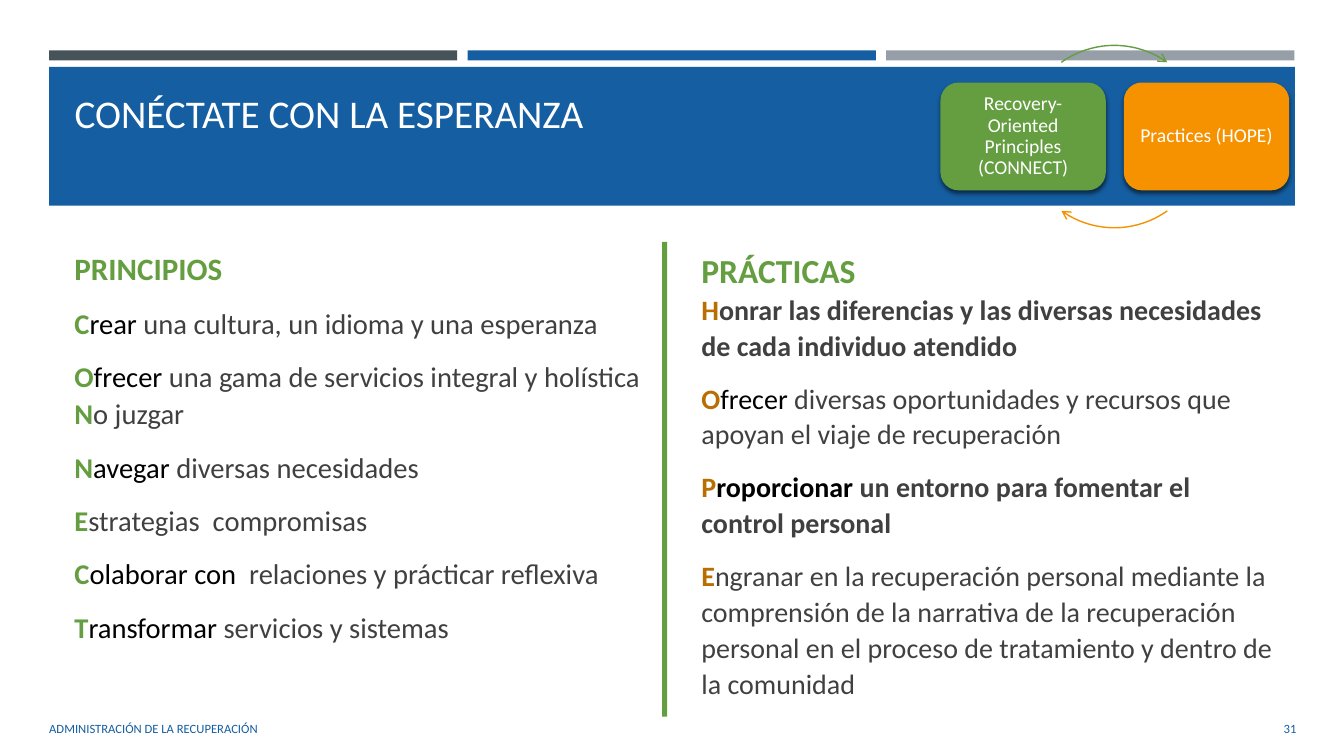
"""Builds the slide on connecting with hope: principles beside practices."""
from lxml import etree
from pptx import Presentation
from pptx.dml.color import RGBColor
from pptx.enum import shapes, text
from pptx.oxml import ns
from pptx.util import Pt

BLUE = RGBColor(0x15, 0x5E, 0xA1)
SLATE = RGBColor(0x46, 0x53, 0x59)
SILVER = RGBColor(0x96, 0x9F, 0xA7)
GREEN = RGBColor(0x64, 0x9E, 0x40)
ORANGE = RGBColor(0xF6, 0x92, 0x00)
BROWN = RGBColor(0xB8, 0x6E, 0x00)
BLACK = RGBColor(0, 0, 0)
GRAY = RGBColor(0x40, 0x40, 0x40)
WHITE = RGBColor(0xFF, 0xFF, 0xFF)
FONT = "Calibri"
BREAK = "\n"

TITLE = "CONÉCTATE CON LA ESPERANZA"
FOOTER = "ADMINISTRACIÓN DE LA RECUPERACIÓN"
PAGE = "31"
STRIPES = [SLATE, BLUE, SILVER]
CARDS = [
    ("Recovery-Oriented Principles (CONNECT)", GREEN, 234.5),
    ("Practices (HOPE)", ORANGE, 54.5),
]
STYLES = {
    "principle": (GREEN, True),
    "practice": (BROWN, True),
    "verb": (BLACK, False),
    "strong verb": (BLACK, True),
    "plain": (GRAY, False),
    "strong": (GRAY, True),
}
PRINCIPLES = [
    [("PRINCIPIOS", "principle", 22.2)],
    [("C", "principle"), ("rear", "verb"), (" una cultura, un idioma y una esperanza", "plain")],
    [("O", "principle"), ("frecer ", "verb"),
     ("una gama de servicios integral y holística", "plain"), (BREAK, "plain"),
     ("N", "principle"), ("o juzgar", "plain")],
    [("N", "principle"), ("avegar ", "verb"), ("diversas necesidades", "plain")],
    [("E", "principle"), ("strategias  compromisas", "plain")],
    [("C", "principle"), ("olaborar con  ", "verb"), ("relaciones y prácticar reflexiva", "plain")],
    [("T", "principle"), ("ransformar ", "verb"), ("servicios y sistemas", "plain")],
]
PRACTICES = [
    [("PRÁCTICAS", "principle", 24), (BREAK, "plain"), ("H", "practice"),
     ("onrar las diferencias y las diversas necesidades de cada individuo atendido", "strong")],
    [("O", "practice"), ("frecer ", "verb"),
     ("diversas oportunidades y recursos que apoyan el viaje de recuperación", "plain")],
    [("P", "practice"), ("roporcionar ", "strong verb"),
     ("un entorno para fomentar el control personal", "strong")],
    [("E", "practice"),
     ("ngranar en la recuperación personal mediante la comprensión de la narrativa de la "
      "recuperación personal en el proceso de tratamiento y dentro de la comunidad", "plain")],
]
COLUMNS = [(46.1, 333.4, PRINCIPLES, 20.4), (493.9, 319, PRACTICES, 20)]
FOOTERS = [(28.1, 537, FOOTER, text.PP_ALIGN.LEFT), (850.3, 82.8, PAGE, text.PP_ALIGN.RIGHT)]


def add_run(paragraph, words, size, color, bold=False):
    run = paragraph.add_run()
    run.text = words
    run.font.name = FONT
    run.font.size = Pt(size)
    run.font.bold = bold
    run.font.color.rgb = color


def add_figure(slide, kind, left, top, width, height, fill=None):
    figure = slide.shapes.add_shape(kind, Pt(left), Pt(top), Pt(width), Pt(height))
    figure.shadow.inherit = False
    if fill is None:
        figure.fill.background()
    else:
        figure.fill.solid()
        figure.fill.fore_color.rgb = fill
        figure.line.fill.background()
    return figure


def add_box(slide, left, top, width, height):
    frame = slide.shapes.add_textbox(Pt(left), Pt(top), Pt(width), Pt(height)).text_frame
    frame.word_wrap = True
    return frame


def add_header(slide):
    for i, color in enumerate(STRIPES):
        add_figure(slide, shapes.MSO_SHAPE.RECTANGLE, 35 + 299 * i, 36, 291.6, 7.2, color)
    band = add_figure(slide, shapes.MSO_SHAPE.RECTANGLE, 35, 47.8, 890, 99.2, BLUE)
    title = slide.shapes.title
    title.left, title.top, title.width, title.height = Pt(46.1), Pt(57.6), Pt(868.3), Pt(77.8)
    band.element.addnext(title.element)
    frame = title.text_frame
    frame.auto_size = text.MSO_AUTO_SIZE.NONE
    frame.vertical_anchor = text.MSO_ANCHOR.TOP
    frame.margin_top = Pt(6.5)
    frame.paragraphs[0].alignment = text.PP_ALIGN.LEFT
    add_run(frame.paragraphs[0], TITLE, 28, WHITE)


def add_column(slide, left, height, items, size):
    frame = add_box(slide, left, 172.8, 427, height)
    for i, item in enumerate(items):
        paragraph = frame.add_paragraph() if i else frame.paragraphs[0]
        paragraph.line_spacing = 1.07
        paragraph.space_after = Pt(12)
        for words, style, *own_size in item:
            if words == BREAK:
                paragraph.add_line_break()
            else:
                add_run(paragraph, words, own_size[0] if own_size else size, *STYLES[style])


def add_card(slide, left, words, color):
    card = add_figure(slide, shapes.MSO_SHAPE.ROUNDED_RECTANGLE, left, 59, 118.1, 77, color)
    effects = card.element.spPr.find(ns.qn("a:effectLst"))
    shadow = etree.SubElement(effects, ns.qn("a:outerShdw"), blurRad=str(Pt(3)),
                              dist=str(Pt(2)), dir="5400000", rotWithShape="0")
    black = etree.SubElement(shadow, ns.qn("a:srgbClr"), val="000000")
    etree.SubElement(black, ns.qn("a:alpha"), val="55000")
    frame = card.text_frame
    frame.word_wrap = True
    frame.vertical_anchor = text.MSO_ANCHOR.MIDDLE
    frame.margin_left = frame.margin_right = frame.margin_top = frame.margin_bottom = Pt(8)
    paragraph = frame.paragraphs[0]
    paragraph.alignment = text.PP_ALIGN.CENTER
    paragraph.line_spacing = 0.9
    add_run(paragraph, words, 14, WHITE)


def add_cycle_arrow(slide, color, start):
    arc = add_figure(slide, shapes.MSO_SHAPE.ARC, 730.8, 32.4, 130.3, 130.3)
    arc.adjustments[0] = start * 0.6
    arc.adjustments[1] = (start + 71) * 0.6
    arc.line.color.rgb = color
    arc.line.width = Pt(1)
    etree.SubElement(arc.element.spPr.find(ns.qn("a:ln")), ns.qn("a:tailEnd"), type="arrow")


def main():
    deck = Presentation()
    deck.slide_width, deck.slide_height = Pt(960), Pt(540)
    slide = deck.slides.add_slide(deck.slide_layouts[5])
    add_header(slide)
    for left, width, words, alignment in FOOTERS:
        frame = add_box(slide, left, 506.2, width, 28.8)
        frame.vertical_anchor = text.MSO_ANCHOR.MIDDLE
        frame.paragraphs[0].alignment = alignment
        add_run(frame.paragraphs[0], words, 9, BLUE)
    for column in COLUMNS:
        add_column(slide, *column)
    add_figure(slide, shapes.MSO_SHAPE.RECTANGLE, 473, 172.8, 3.6, 339.1, GREEN)
    for i, (words, color, start) in enumerate(CARDS):
        add_card(slide, 671.8 + 131 * i, words, color)
        add_cycle_arrow(slide, color, start)
    deck.save("out.pptx")


if __name__ == "__main__":
    main()
